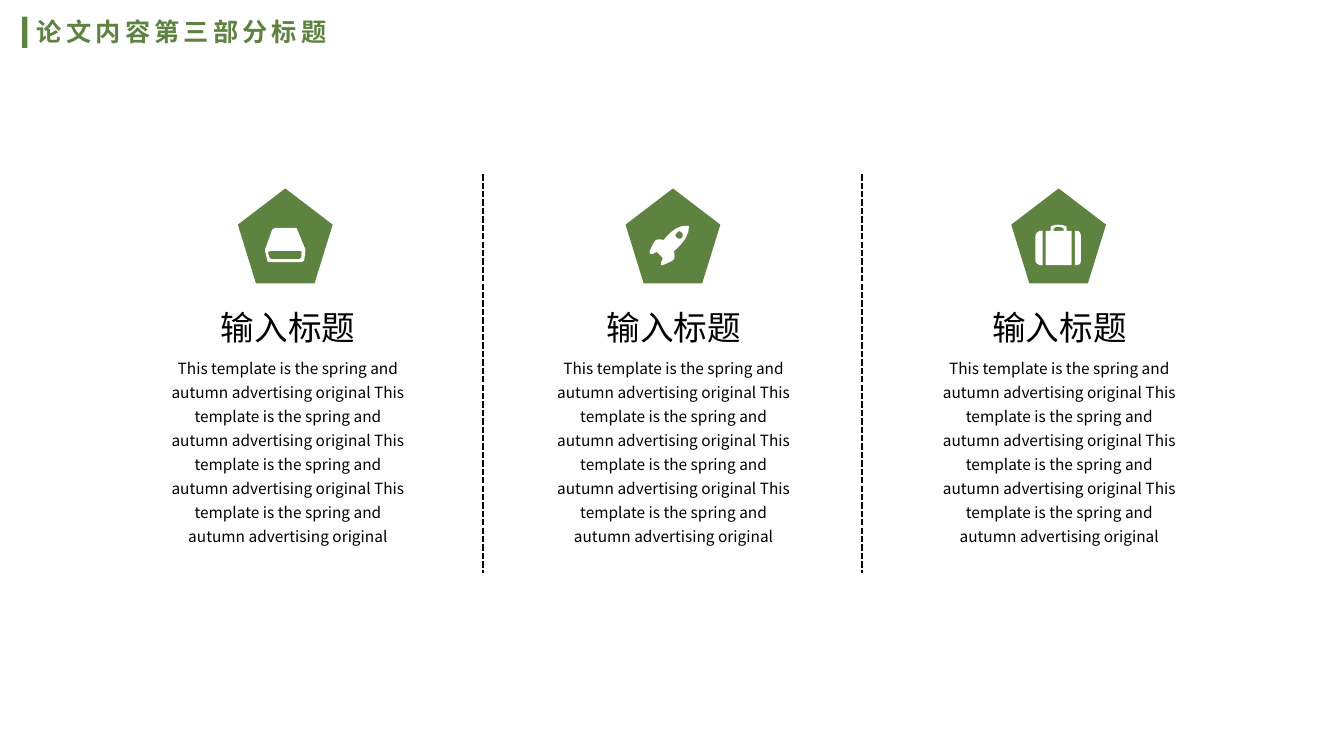
from dataclasses import dataclass

from lxml import etree
from pptx import Presentation
from pptx.dml.color import RGBColor
from pptx.enum.dml import MSO_LINE
from pptx.enum.shapes import MSO_CONNECTOR, MSO_SHAPE
from pptx.enum.text import MSO_ANCHOR, MSO_AUTO_SIZE, PP_ALIGN
from pptx.oxml.ns import qn
from pptx.util import Cm, Pt

LEFT, MID = PP_ALIGN.LEFT, PP_ALIGN.CENTER
TOP, FIXED = MSO_ANCHOR.TOP, MSO_AUTO_SIZE.NONE
DASH, LINE = MSO_LINE.SQUARE_DOT, MSO_CONNECTOR.STRAIGHT
RECT, PENTA = MSO_SHAPE.RECTANGLE, MSO_SHAPE.REGULAR_PENTAGON

TITLE = "论文内容第三部分标题"
HEAD = "输入标题"
BODY = " ".join(["This template is the spring and autumn advertising original"] * 4)

DRIVE = [
    [(66, 58), (59, 41), (59, 40, 58, 39, 56, 39), (38, 39),
     (37, 39, 35, 40, 34, 41), (28, 58), (27, 59, 27, 62, 27, 62), (29, 70),
     (29, 72, 30, 73, 31, 73), (63, 73), (64, 73, 66, 72, 66, 70), (67, 62),
     (67, 62, 67, 59, 66, 58)],
    [(63, 64), (63, 67), (63, 69, 62, 70, 61, 70), (33, 70),
     (33, 70, 31, 69, 31, 67), (30, 64), (30, 63, 31, 62, 33, 62), (62, 62),
     (63, 62, 64, 63, 63, 64)],
]
ROCKET = [
    [(48, 62), (48, 62, 64, 50, 63, 37), (62, 37), (49, 35, 38, 51, 38, 51),
     (28, 49, 29, 52, 24, 62), (23, 65, 25, 65, 27, 65),
     (28, 64, 31, 63, 31, 63), (37, 69), (37, 69, 36, 72, 35, 74),
     (35, 75, 35, 77, 37, 76), (48, 71, 50, 72, 48, 62)],
    [(51, 49), (49, 47, 49, 45, 51, 44), (52, 42, 55, 42, 56, 44),
     (57, 45, 57, 47, 56, 49), (55, 50, 52, 50, 51, 49)],
]
CASE = [
    [(65, 42), (63, 42), (63, 76), (65, 76), (68, 76, 69, 74, 69, 72),
     (69, 47), (69, 45, 68, 42, 65, 42)],
    [(24, 47), (24, 72), (24, 74, 27, 76, 29, 76), (31, 76), (31, 42),
     (29, 42), (27, 42, 24, 45, 24, 47)],
    [(55, 38), (53, 37, 51, 36, 47, 36), (43, 36, 40, 37, 39, 38), (39, 42),
     (34, 42), (34, 76), (60, 76), (60, 42), (55, 42)],
    [(52, 42), (42, 42), (42, 40), (43, 39, 44, 38, 47, 38),
     (49, 38, 51, 39, 52, 40)],
]
PARTS = [(7.19, DRIVE), (16.96, ROCKET), (26.68, CASE)]


@dataclass(frozen=True)
class Theme:
    green: RGBColor = RGBColor(0x5E, 0x82, 0x40)
    black: RGBColor = RGBColor(0, 0, 0)
    white: RGBColor = RGBColor(255, 255, 255)
    sans: str = "Noto Sans CJK SC"
    latin: str = "Calibri"
    title: float = 18
    head: float = 24
    body: float = 11


LOOK = Theme()
FIRST, STEP = 7.26, 9.72
SIDE, CREST = 2.39, 4.75
UNIT = 0.0254
CURVE = 6


def place(shape, *box):
    shape.left, shape.top, shape.width, shape.height = map(Cm, box)


def write(shape, text, *, size, lead, color=LOOK.black, font=LOOK.sans,
          align=MID, bold=False, gap=0, inset=0.25):
    frame = shape.text_frame
    frame.word_wrap = True
    frame.auto_size = FIXED
    frame.vertical_anchor = TOP
    frame.margin_left = frame.margin_right = Cm(inset)
    frame.margin_top = frame.margin_bottom = Cm(0.13)
    para = frame.paragraphs[0]
    para.alignment = align
    para.line_spacing = Pt(lead)
    para.space_before = Pt(0)
    run = para.add_run()
    run.text = text
    run.font.size, run.font.bold = Pt(size), bold
    run.font.name = font
    run.font.color.rgb = color
    props = run.font._element
    props.set("spc", str(gap * 100))
    etree.SubElement(props, qn("a:ea")).set("typeface", LOOK.sans)


def paint(shape, color):
    shape.shadow.inherit = False
    shape.fill.solid()
    shape.fill.fore_color.rgb = color
    shape.line.fill.background()


def block(slide, kind, color, *box):
    shape = slide.shapes.add_shape(kind, *map(Cm, box))
    paint(shape, color)


def trace(steps):
    spots = [steps[0]]
    for step in steps[1:]:
        if len(step) == 2:
            spots.append(step)
            continue
        start = spots[-1]
        ends = [start, step[:2], step[2:4], step[4:]]
        for i in range(1, CURVE + 1):
            t = i / CURVE
            rates = ((1 - t) ** 3, 3 * t * (1 - t) ** 2, 3 * t * t * (1 - t), t ** 3)
            spots.append(tuple(sum(r * e[k] for r, e in zip(rates, ends))
                               for k in (0, 1)))
    return spots


def icon(slide, left, paths):
    pen = None
    for steps in paths:
        spots = [(Cm(left + x * UNIT), Cm(CREST + y * UNIT)) for x, y in trace(steps)]
        if pen is None:
            pen = slide.shapes.build_freeform(*spots[0])
        else:
            pen.move_to(*spots[0])
        pen.add_line_segments(spots[1:], close=True)
    paint(pen.convert_to_shape(), LOOK.white)


def label(slide, text, box, **style):
    write(slide.shapes.add_textbox(*map(Cm, box)), text, **style)


def rule(slide, x):
    line = slide.shapes.add_connector(LINE, Cm(x), Cm(4.39), Cm(x), Cm(14.43))
    line.line.color.rgb = LOOK.black
    line.line.width = Pt(1.5)
    line.line.dash_style = DASH
    etree.SubElement(line._element.spPr, qn("a:effectLst"))


def main():
    deck = Presentation()
    deck.slide_width, deck.slide_height = Cm(33.87), Cm(19.05)
    slide = deck.slides.add_slide(deck.slide_layouts[5])
    title = slide.shapes.title
    place(title, 0.68, 0.28, 7.95, 1.02)
    write(title, TITLE, size=LOOK.title, lead=21.6, color=LOOK.green,
          font=LOOK.latin, align=LEFT, bold=True, gap=3)
    block(slide, RECT, LOOK.green, 0.56, 0.42, 0.13, 0.79)
    for i, (mid, paths) in enumerate(PARTS):
        left = mid - SIDE / 2
        block(slide, PENTA, LOOK.green, left, CREST, SIDE, SIDE)
        icon(slide, left, paths)
        axis = FIRST + i * STEP
        label(slide, HEAD, (axis - 2.41, 7.59, 4.82, 1.27), size=LOOK.head, lead=29.4)
        label(slide, BODY, (axis - 3.37, 8.79, 6.74, 5.08), size=LOOK.body,
              lead=17.15, inset=0.35)
    for x in (12.17, 21.72):
        rule(slide, x)
    deck.save("out.pptx")


if __name__ == "__main__":
    main()
